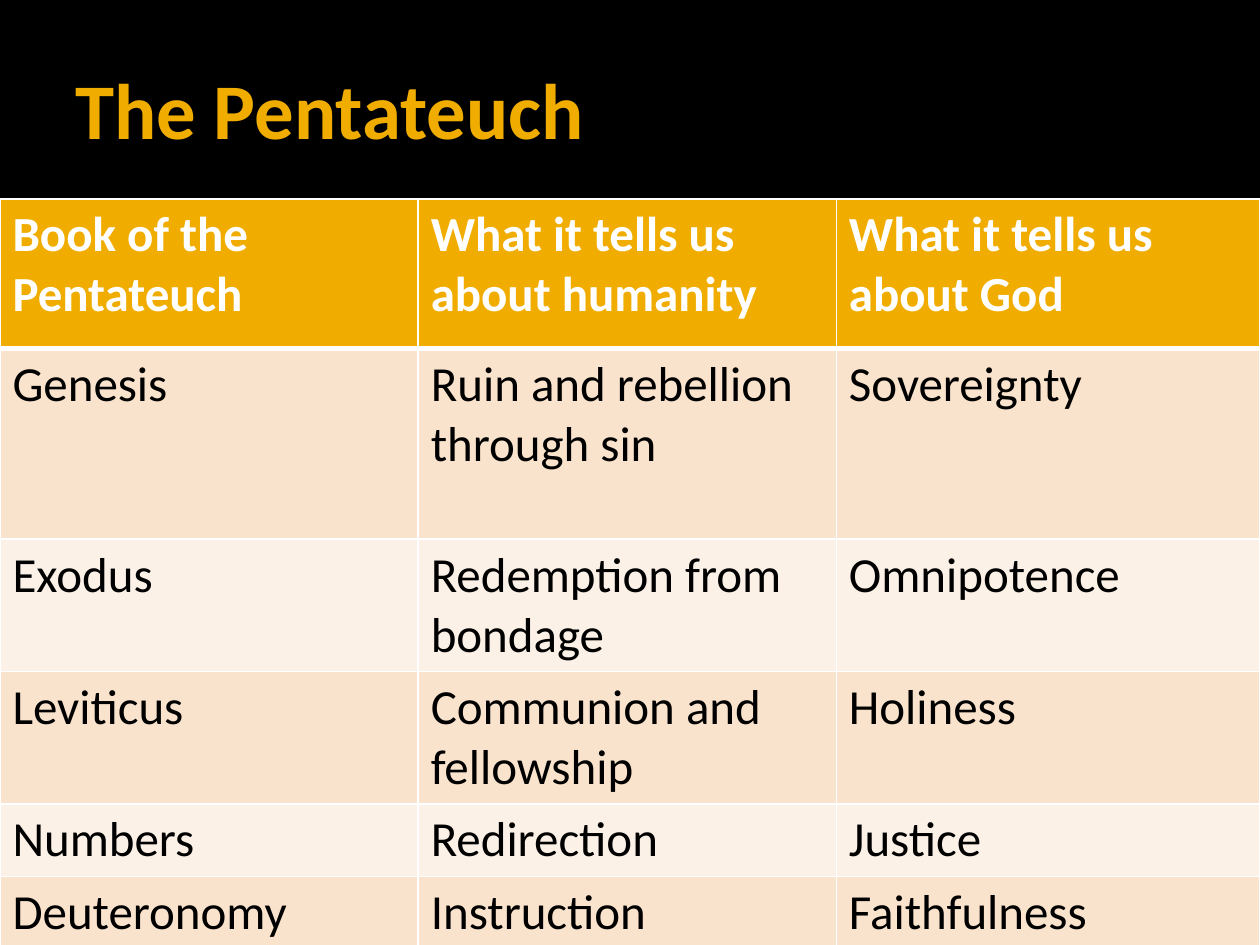
from typing import Any, NamedTuple

from lxml.etree import SubElement
from pptx import Presentation
from pptx.dml.color import RGBColor
from pptx.enum.shapes import MSO_SHAPE as Preset
from pptx.enum.text import MSO_ANCHOR as Anchor, PP_ALIGN as Align
from pptx.oxml.ns import qn
from pptx.util import Cm, Pt

GOLD = RGBColor(0xF0, 0xAD, 0x00)
PEACH = RGBColor(0xF9, 0xE3, 0xCC)
CREAM = RGBColor(0xFC, 0xF1, 0xE7)
WHITE = RGBColor(0xFF, 0xFF, 0xFF)
BLACK = RGBColor(0x00, 0x00, 0x00)

SLIDE_WIDTH = Cm(25.4)
SLIDE_HEIGHT = Cm(19.05)
TABLE_TOP = Cm(4.01)
COLUMN_WIDTHS = (Cm(8.43), Cm(8.43), Cm(8.54))
TITLE_FONT = {"name": "Calibri", "size": Pt(45), "bold": True}
HEADING_FONT = {"name": "Calibri", "size": Pt(28), "bold": True}
BODY_FONT = {"name": "Calibri", "size": Pt(28), "bold": False}


class Band(NamedTuple):
    top: Cm
    height: Cm
    color: RGBColor


class BookRow(NamedTuple):
    height: Cm
    book: str
    humanity: str
    god: str


BANDS = (
    Band(Cm(3.99), Cm(0.12), WHITE),
    Band(Cm(0), Cm(3.99), BLACK),
)

BOOK_ROWS = (
    BookRow(Cm(3.02), "Book of the Pentateuch", "What it tells us about humanity",
            "What it tells us about God"),
    BookRow(Cm(3.84), "Genesis", "Ruin and rebellion through sin", "Sovereignty"),
    BookRow(Cm(2.64), "Exodus", "Redemption from bondage", "Omnipotence"),
    BookRow(Cm(2.64), "Leviticus", "Communion and fellowship", "Holiness"),
    BookRow(Cm(1.45), "Numbers", "Redirection", "Justice"),
    BookRow(Cm(1.4), "Deuteronomy", "Instruction", "Faithfulness"),
)


def apply_format(target: Any, values: dict[str, Any]) -> None:
    for attribute, value in values.items():
        setattr(target, attribute, value)


def write_text(frame: Any, text: str, font: dict[str, Any], color: RGBColor) -> None:
    paragraph = frame.paragraphs[0]
    paragraph.alignment = Align.LEFT
    run = paragraph.add_run()
    run.text = text
    apply_format(run.font, font)
    run.font.color.rgb = color


def draw_band(slide: Any, band: Band) -> None:
    strip = slide.shapes.add_shape(Preset.RECTANGLE, 0, band.top, SLIDE_WIDTH, band.height)
    strip.shadow.inherit = False
    strip.fill.solid()
    strip.fill.fore_color.rgb = band.color
    strip.line.fill.background()


def draw_title(slide: Any, text: str) -> None:
    title = slide.shapes.title
    slide.shapes._spTree.append(title._element)
    apply_format(title, {"left": Cm(1.27), "top": Cm(0.43),
                         "width": Cm(22.86), "height": Cm(3.48)})
    apply_format(title.text_frame, {
        "vertical_anchor": Anchor.MIDDLE, "word_wrap": True,
        "margin_left": Cm(0.25), "margin_right": Cm(0.13),
        "margin_top": Cm(0.13), "margin_bottom": Cm(0.13),
    })
    write_text(title.text_frame, text, TITLE_FONT, GOLD)


def set_borders(cell: Any, widths: dict[str, Pt]) -> None:
    properties = cell._tc.get_or_add_tcPr()
    for position, (side, width) in enumerate(widths.items()):
        border = SubElement(properties, qn(f"a:ln{side}"), w=str(int(width)))
        fill = SubElement(border, qn("a:solidFill"))
        SubElement(fill, qn("a:srgbClr"), val=str(WHITE))
        properties.insert(position, border)


def draw_table(slide: Any, rows: tuple[BookRow, ...]) -> None:
    table = slide.shapes.add_table(
        len(rows), len(COLUMN_WIDTHS), 0, TABLE_TOP, SLIDE_WIDTH,
        sum(row.height for row in rows),
    ).table
    for column, width in zip(table.columns, COLUMN_WIDTHS):
        column.width = width
    for index, row in enumerate(rows):
        table.rows[index].height = row.height
        is_heading = index == 0
        fill = GOLD if is_heading else PEACH if index % 2 else CREAM
        font = HEADING_FONT if is_heading else BODY_FONT
        color = WHITE if is_heading else BLACK
        borders = {"L": Pt(1), "R": Pt(1), "T": Pt(3 if index == 1 else 1),
                   "B": Pt(3 if is_heading else 1)}
        for cell, text in zip(table.rows[index].cells, (row.book, row.humanity, row.god)):
            cell.fill.solid()
            cell.fill.fore_color.rgb = fill
            set_borders(cell, borders)
            write_text(cell.text_frame, text, font, color)


def main() -> None:
    deck = Presentation()
    apply_format(deck, {"slide_width": SLIDE_WIDTH, "slide_height": SLIDE_HEIGHT})
    slide = deck.slides.add_slide(deck.slide_layouts[5])
    for band in BANDS:
        draw_band(slide, band)
    draw_title(slide, "The Pentateuch")
    draw_table(slide, BOOK_ROWS)
    deck.save("out.pptx")


if __name__ == "__main__":
    main()
